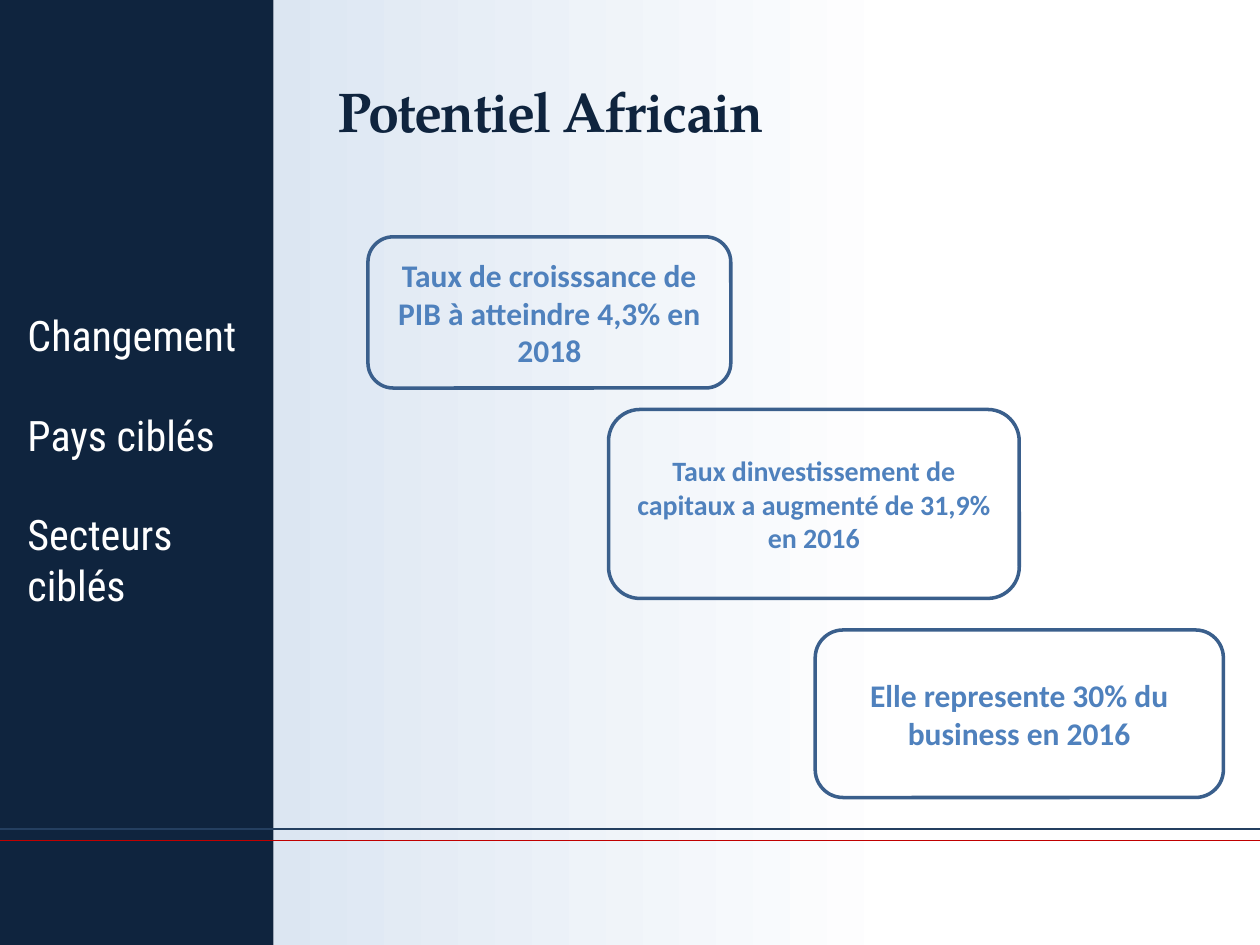
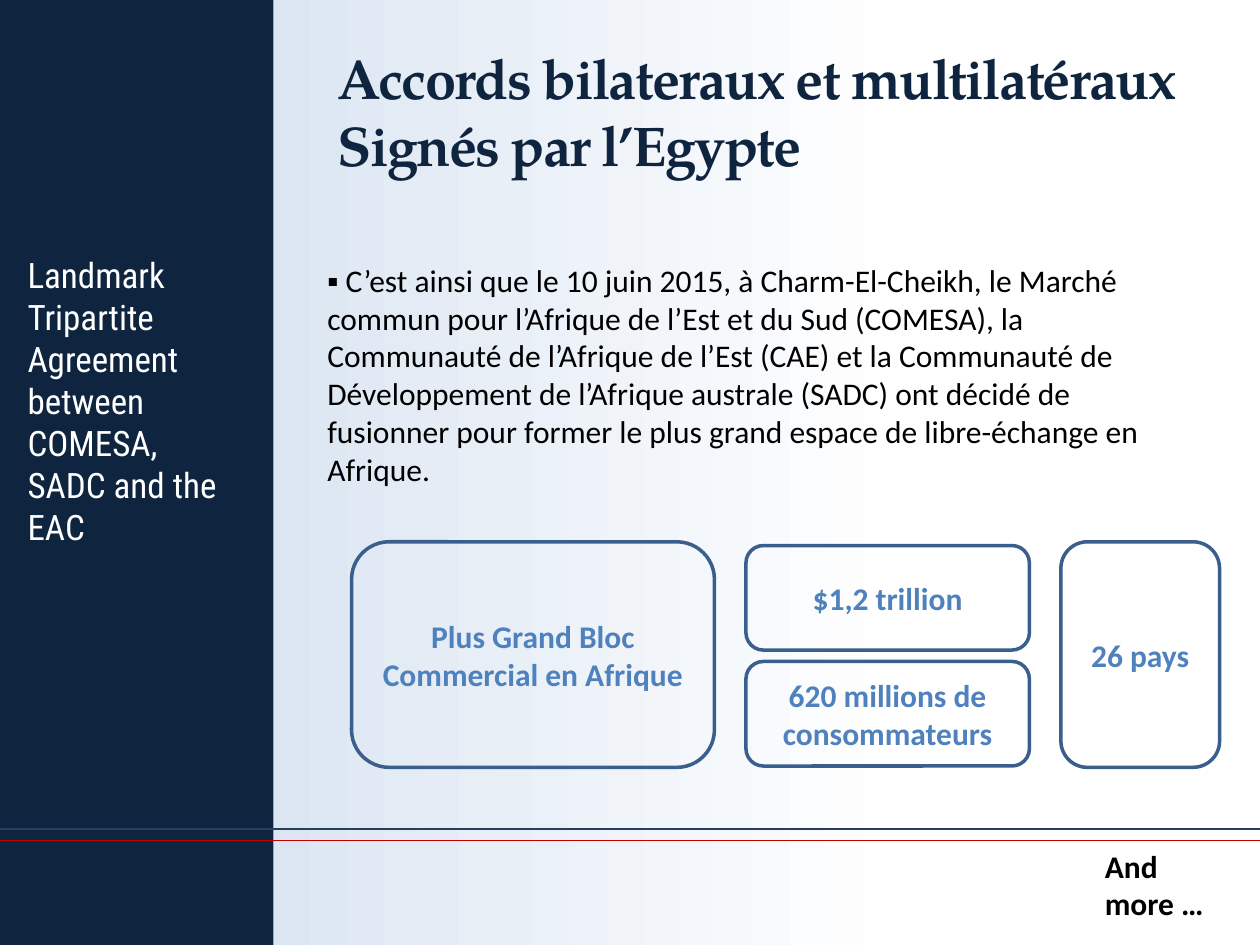
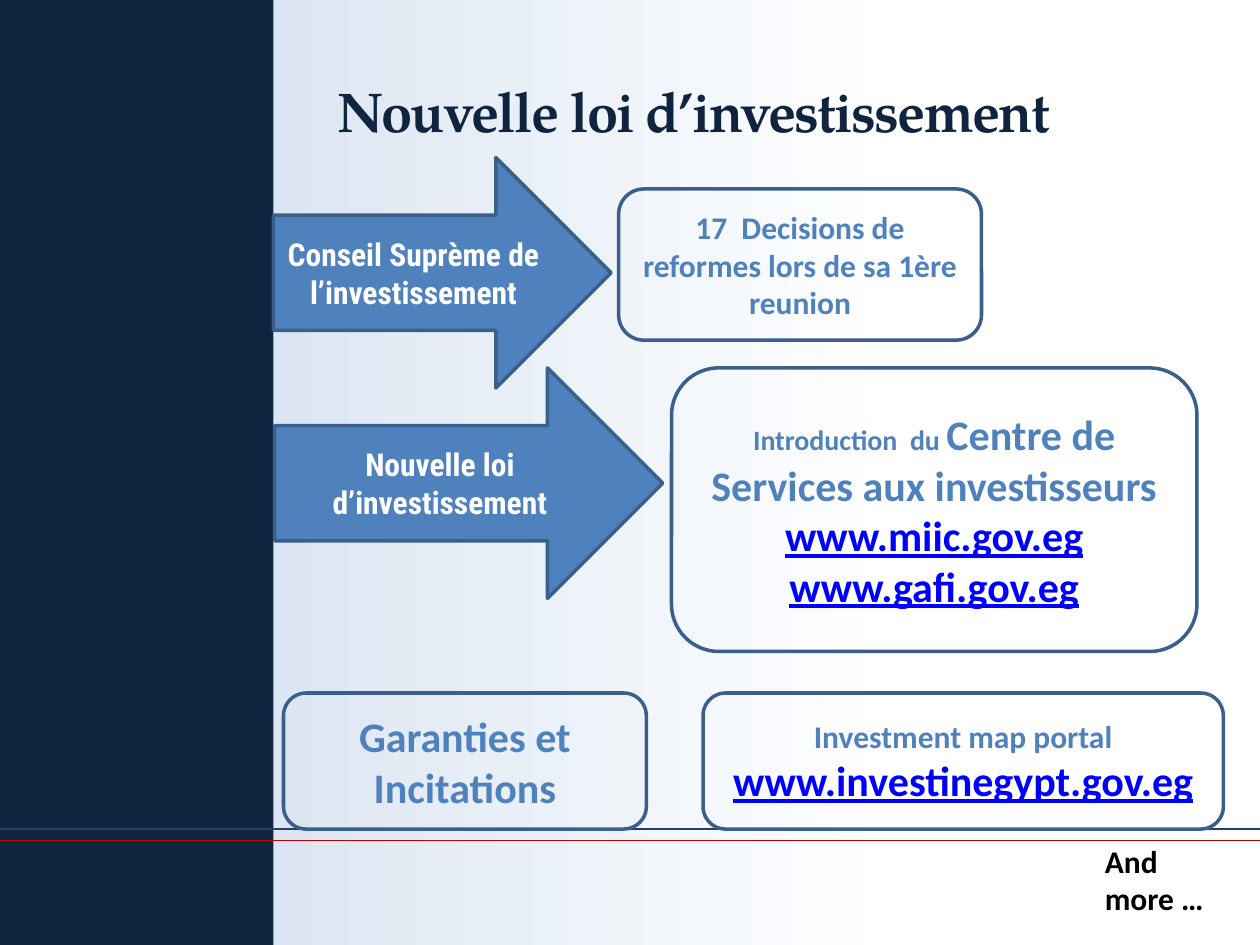
"""Build three slides on African potential, Egyptian trade agreements and the investment law."""
from dataclasses import dataclass

from pptx import Presentation
from pptx.dml.color import RGBColor
from pptx.enum.shapes import MSO_CONNECTOR, MSO_SHAPE
from pptx.enum.text import MSO_ANCHOR, MSO_AUTO_SIZE, PP_ALIGN
from pptx.oxml.ns import qn
from pptx.util import Inches, Pt

RECT, ROUNDED, ARROW = MSO_SHAPE.RECTANGLE, MSO_SHAPE.ROUNDED_RECTANGLE, MSO_SHAPE.RIGHT_ARROW
STRAIGHT = MSO_CONNECTOR.STRAIGHT
TOP, MIDDLE = MSO_ANCHOR.TOP, MSO_ANCHOR.MIDDLE
LEFT, CENTER = PP_ALIGN.LEFT, PP_ALIGN.CENTER
TITLE_ONLY = 5


@dataclass(frozen=True)
class Theme:
    """Colours, fonts and type sizes of the deck."""
    navy: str = "0F243E"
    blue: str = "4F81BD"
    edge: str = "3A5F8C"
    pale: str = "DCE6F2"
    white: str = "FFFFFF"
    black: str = "000000"
    red: str = "C00000"
    rule: str = "243F60"
    link: str = "0000FF"
    body: str = "Calibri"
    side: str = "Roboto Condensed"
    head: str = "TeX Gyre Pagella"
    title: int = 32
    large: int = 24
    medium: int = 20
    normal: int = 18
    small: int = 16


T = Theme()
BIG = {"size": T.large}
LINK = {"size": T.large, "color": T.link, "underline": True}

SLIDES = [
    {
        "title": ["Potentiel Africain"],
        "side": {"at": (0.12, 2.41, 2.46, 2.52), "size": T.large, "gaps": (0, 28, 28, 0),
                 "text": ["Changement", "Pays ciblés", "Secteurs", "ciblés"]},
        "boxes": [
            ((2.92, 1.88, 2.88, 1.2), ["Taux de croisssance de PIB à atteindre 4,3% en 2018"], T.normal),
            ((4.83, 3.25, 3.26, 1.5),
             ["Taux dinvestissement de capitaux a augmenté de 31,9% en 2016"], T.small),
            ((6.47, 5, 3.24, 1.33), ["Elle represente 30% du business en 2016"], T.normal),
        ],
    },
    {
        "title": ["Accords bilateraux et multilatéraux", "Signés par l’Egypte"],
        "side": {"at": (0.12, 1.96, 2.21, 2.46), "size": T.medium,
                 "text": ["Landmark Tripartite Agreement between COMESA,", "SADC and the EAC"]},
        "body": "▪ C’est ainsi que le 10 juin 2015, à Charm-El-Cheikh, le Marché commun pour "
                "l’Afrique de l’Est et du Sud (COMESA), la Communauté de l’Afrique de l’Est (CAE) "
                "et la Communauté de Développement de l’Afrique australe (SADC) ont décidé de "
                "fusionner pour former le plus grand espace de libre-échange en Afrique.",
        "boxes": [
            ((2.79, 4.3, 2.88, 1.79), ["Plus Grand Bloc Commercial en Afrique"], T.normal),
            ((5.92, 4.33, 2.25, 0.83), ["$1,2 trillion"], T.normal),
            ((5.92, 5.25, 2.25, 0.83), ["620 millions de consommateurs"], T.normal),
            ((8.42, 4.3, 1.26, 1.79), ["26 pays"], T.normal),
        ],
        "more_top": 6.67,
    },
    {
        "title": ["Nouvelle loi d’investissement"],
        "arrows": [
            ((2.18, 2.92, 3.08, 1.83), ["Nouvelle loi d’investissement"]),
            ((2.17, 1.25, 2.68, 1.83), ["Conseil Suprème de l’investissement"]),
        ],
        "boxes": [
            ((5.33, 2.92, 4.17, 2.25),
             [[("Introduction  du ", {}), ("Centre de Services aux investisseurs", BIG)],
              [("www.miic.gov.eg", LINK)], [("www.gafi.gov.eg", LINK)]], T.small),
            ((4.91, 1.5, 2.88, 1.2), ["17  Decisions de reformes lors de sa 1ère reunion"], T.normal),
            ((5.58, 5.5, 4.13, 1.08),
             ["Investment map portal", [("www.investinegypt.gov.eg", LINK)]], T.normal),
            ((2.25, 5.5, 2.88, 1.08), ["Garanties et Incitations"], T.large),
        ],
        "more_top": 6.63,
    },
]


def rgb(color):
    """Turn a hex string into a colour."""
    return RGBColor.from_string(color)


def inches(at):
    """Turn a tuple of numbers into lengths."""
    return [Inches(v) for v in at]


def write(tf, paragraphs, size=T.normal, font=T.body, color=T.black, bold=False, underline=False,
          align=LEFT, anchor=TOP, gaps=(), spacing=None):
    """Fill a text frame; a paragraph is a string or a list of (text, overrides) runs."""
    tf.word_wrap = True
    tf.auto_size = MSO_AUTO_SIZE.NONE
    tf.vertical_anchor = anchor
    base = {"size": size, "color": color, "underline": underline}
    for i, content in enumerate(paragraphs):
        p = tf.add_paragraph() if i else tf.paragraphs[0]
        p.alignment = align
        p.space_before = Pt(gaps[i] if gaps else 0)
        for text, changes in [(content, {})] if isinstance(content, str) else content:
            look = {**base, **changes}
            r = p.add_run()
            r.text = text
            r.font.name, r.font.bold = font, bold
            r.font.size = Pt(look["size"])
            r.font.color.rgb = rgb(look["color"])
            if look["underline"]:
                r.font.underline = True
            if spacing is not None:
                r.font._element.set("spc", str(spacing))


def add_text(s, at, paragraphs, **fmt):
    """Add a text box."""
    write(s.shapes.add_textbox(*inches(at)).text_frame, paragraphs, **fmt)


def add_block(s, kind, at, fill=None, line=None):
    """Add a preset shape without shadow."""
    sp = s.shapes.add_shape(kind, *inches(at))
    sp.shadow.inherit = False
    if fill:
        sp.fill.solid()
        sp.fill.fore_color.rgb = rgb(fill)
    else:
        sp.fill.background()
    if line:
        sp.line.color.rgb = rgb(line)
        sp.line.width = Pt(2)
    else:
        sp.line.fill.background()
    return sp


def add_rule(s, y, color, width):
    """Add a line across the whole slide."""
    line = s.shapes.add_connector(STRAIGHT, *inches((0, y, 10, y)))
    line.line.color.rgb = rgb(color)
    line.line.width = Pt(width)
    sp_pr = line.element.spPr
    sp_pr.append(sp_pr.makeelement(qn("a:effectLst"), {}))
    return line


def set_background(layout, s):
    """Draw the bands and rules on a slide and move them to the back of its layout."""
    fade = add_block(s, RECT, (2.17, 0, 4.98, 7.5))
    fade.fill.gradient()
    fade.fill.gradient_angle = 0
    for stop, color, position in zip(fade.fill.gradient_stops, (T.pale, T.white), (0, 1)):
        stop.color.rgb = rgb(color)
        stop.position = position
    band = add_block(s, RECT, (0, 0, 2.17, 7.5), fill=T.navy)
    rules = [add_rule(s, 6.58, T.rule, 0.75), add_rule(s, 6.67, T.red, 1)]
    for i, part in enumerate([fade, band, *rules]):
        layout.shapes.element.insert(2 + i, part.element)


def fill_slide(s, data):
    """Place the title, side text, boxes and arrows of one slide."""
    title = s.shapes.title
    title.left, title.top, title.width, title.height = inches((2.58, 0.25, 6.92, 1.25))
    write(title.text_frame, data["title"], size=T.title, font=T.head, color=T.navy,
          bold=True, anchor=MIDDLE, spacing=-100)
    if "side" in data:
        side = data["side"]
        add_text(s, side["at"], side["text"], size=side["size"], font=T.side, color=T.white,
                 gaps=side.get("gaps", ()))
    if "body" in data:
        add_text(s, (2.5, 2.02, 6.67, 1.92), [data["body"]])
    for at, text in data.get("arrows", []):
        sp = add_block(s, ARROW, at, fill=T.blue, line=T.edge)
        write(sp.text_frame, text, font=T.side, color=T.white, bold=True,
              align=CENTER, anchor=MIDDLE)
    for at, text, size in data["boxes"]:
        sp = add_block(s, ROUNDED, at, line=T.edge)
        write(sp.text_frame, text, size=size, color=T.blue, bold=True,
              align=CENTER, anchor=MIDDLE)
    if "more_top" in data:
        add_text(s, (8.67, data["more_top"], 1.01, 0.71), ["And more …"], bold=True)


def main():
    """Build and save the deck."""
    prs = Presentation()
    prs.slide_width, prs.slide_height = Inches(10), Inches(7.5)
    layout = prs.slide_layouts[TITLE_ONLY]
    for i, data in enumerate(SLIDES):
        s = prs.slides.add_slide(layout)
        if i == 0:
            set_background(layout, s)
        fill_slide(s, data)
    prs.save("out.pptx")


if __name__ == "__main__":
    main()
